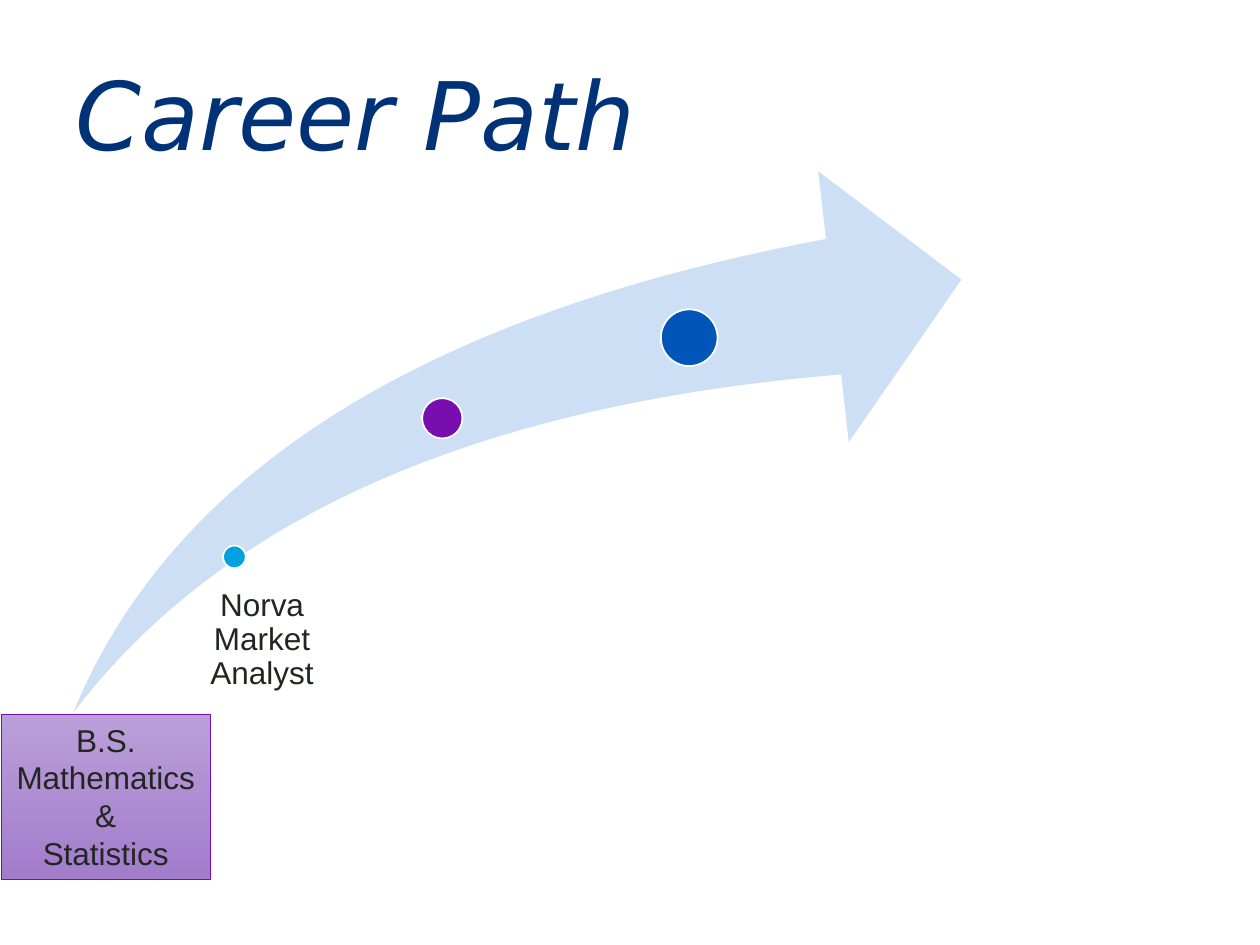
import pptx
import pptx.dml.color
import pptx.enum.shapes
import pptx.enum.text
import pptx.util

Inches = pptx.util.Inches
Pt = pptx.util.Pt
SHAPE = pptx.enum.shapes.MSO_SHAPE
ALIGN = pptx.enum.text.PP_ALIGN
ANCHOR = pptx.enum.text.MSO_ANCHOR

COLORS = {
    "title": "003278",
    "text": "202720",
    "arrow": "CCDFF4",
    "outline": "FFFFFF",
    "first": "00A0E1",
    "second": "780EAD",
    "third": "0055B8",
    "degree_top": "BA9ED9",
    "degree_bottom": "A37CCC",
}
TITLE_FONT = {"name": "DejaVu Sans", "size": Pt(54), "italic": True, "bold": False}
BODY_FONT = {"name": "Arial", "size": Pt(18)}
NO_MARGINS = {"margin_left": 0, "margin_top": 0, "margin_right": 0, "margin_bottom": 0}


def rgb(key):
    return pptx.dml.color.RGBColor.from_string(COLORS[key])


def apply(target, values):
    for name, value in values.items():
        setattr(target, name, value)


def write(frame, lines, font, color, frame_format, paragraph_format):
    apply(frame, {"word_wrap": True, **frame_format})
    frame.text = "\n".join(lines)
    for paragraph in frame.paragraphs:
        apply(paragraph, paragraph_format)
        apply(paragraph.font, font)
        paragraph.font.color.rgb = rgb(color)


def add_preset(slide, preset, box, fill=None, line=None, line_width=1):
    preset_shape = slide.shapes.add_shape(preset, *map(Inches, box))
    preset_shape.shadow.inherit = False
    if fill:
        preset_shape.fill.solid()
        preset_shape.fill.fore_color.rgb = rgb(fill)
    if line:
        preset_shape.line.color.rgb = rgb(line)
        preset_shape.line.width = Pt(line_width)
    else:
        preset_shape.line.fill.background()
    return preset_shape


def place_title(slide, box):
    title = slide.shapes.title
    apply(title, dict(zip(("left", "top", "width", "height"), map(Inches, box))))
    write(title.text_frame, ["Career Path"], TITLE_FONT, "title",
          {**NO_MARGINS, "vertical_anchor": ANCHOR.TOP},
          {"alignment": ALIGN.LEFT, "line_spacing": 0.9})


def add_career_arrow(slide, box):
    left, top, width, height = box
    arrow = add_preset(slide, SHAPE.SWOOSH_ARROW, box, "arrow")
    arrow.adjustments[0] = arrow.adjustments[1] = 0.25

    milestones = [("first", 1.28, 3.06, 0.18),
                  ("second", 2.93, 1.96, 0.32),
                  ("third", 4.89, 1.32, 0.45)]
    for color, center_x, center_y, size in milestones:
        add_preset(slide, SHAPE.OVAL,
                   (left + center_x - size / 2, top + center_y - size / 2, size, size),
                   color, "outline")

    first_job = slide.shapes.add_textbox(
        *map(Inches, (left + 0.84, top + 2.89, 1.23, 1.24)))
    write(first_job.text_frame, ["Norva Market Analyst"], BODY_FONT, "text",
          {**NO_MARGINS, "margin_left": Inches(0.09), "vertical_anchor": ANCHOR.BOTTOM},
          {"alignment": ALIGN.CENTER, "line_spacing": 0.9})


def add_degree(slide, box):
    degree = add_preset(slide, SHAPE.RECTANGLE, box, line="second", line_width=0.5)
    degree.fill.gradient()
    degree.fill.gradient_angle = 270
    for stop, color in zip(degree.fill.gradient_stops, ("degree_top", "degree_bottom")):
        stop.color.rgb = rgb(color)
    write(degree.text_frame, ["B.S. Mathematics &", "Statistics"], BODY_FONT, "text",
          {"vertical_anchor": ANCHOR.TOP}, {"alignment": ALIGN.CENTER})


def main():
    deck = pptx.Presentation()
    deck.slide_width, deck.slide_height = Inches(10), Inches(7.5)
    slide = deck.slides.add_slide(deck.slide_layouts[5])
    add_career_arrow(slide, (0.58, 1.36, 7.05, 4.3))
    place_title(slide, (0.6, 0.55, 8.62, 1.45))
    add_degree(slide, (0.01, 5.67, 1.66, 1.31))
    deck.save("out.pptx")


if __name__ == "__main__":
    main()
